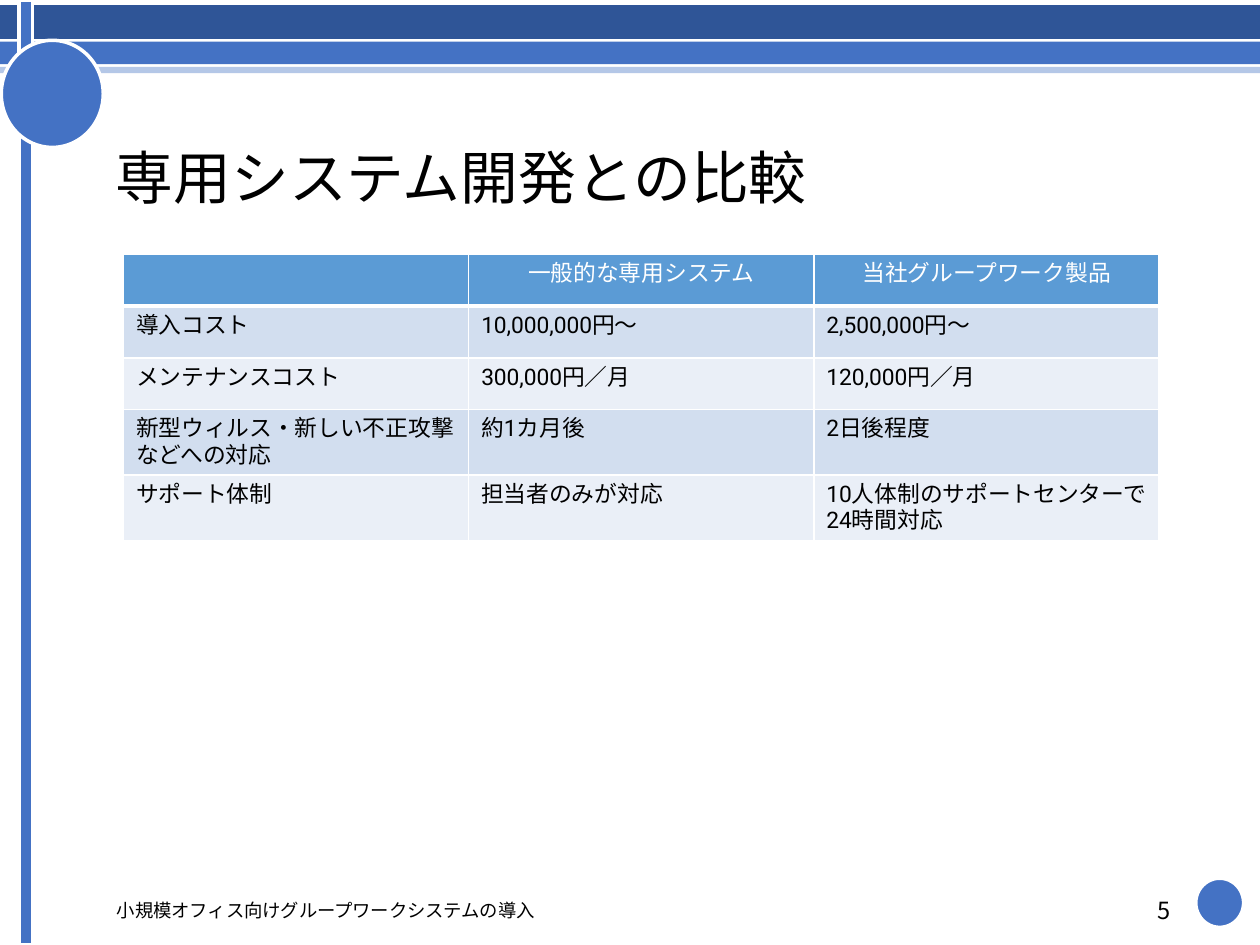
from lxml.etree import SubElement
from pptx import Presentation
from pptx.dml.color import RGBColor
from pptx.enum.shapes import MSO_SHAPE as Shape
from pptx.enum.text import MSO_ANCHOR as Anchor, PP_ALIGN as Align
from pptx.oxml.ns import qn
from pptx.util import Inches, Pt

WHITE = RGBColor(0xFF, 0xFF, 0xFF)
BLACK = RGBColor(0x00, 0x00, 0x00)
NAVY = RGBColor(0x2F, 0x55, 0x97)
BLUE = RGBColor(0x44, 0x72, 0xC4)
PALE_BLUE = RGBColor(0xB4, 0xC7, 0xE7)
HEADER_BLUE = RGBColor(0x5B, 0x9B, 0xD5)
BAND_DARK = RGBColor(0xD2, 0xDE, 0xEF)
BAND_LIGHT = RGBColor(0xEA, 0xEF, 0xF7)

TITLE_FORMAT = {"name": "Roboto", "size": Pt(33)}
TABLE_FORMAT = {"name": "Roboto", "size": Pt(13)}
FOOTER_FORMAT = {"name": "Noto Sans CJK JP", "size": Pt(10.5)}
NUMBER_FORMAT = {"name": "Noto Sans CJK JP", "size": Pt(13.5)}

COMPARISON = [
    ["", "一般的な専用システム", "当社グループワーク製品"],
    ["導入コスト", "10,000,000円～", "2,500,000円～"],
    ["メンテナンスコスト", "300,000円／月", "120,000円／月"],
    ["新型ウィルス・新しい不正攻撃などへの対応", "約1カ月後", "2日後程度"],
    ["サポート体制", "担当者のみが対応", "10人体制のサポートセンターで24時間対応"],
]


def to_inches(box):
    return [Inches(length) for length in box]


def write_text(frame, text, font_format, color=BLACK, align=Align.LEFT):
    paragraph = frame.paragraphs[0]
    paragraph.alignment = align
    run = paragraph.add_run()
    run.text = text
    for name, value in font_format.items():
        setattr(run.font, name, value)
    run.font.color.rgb = color
    east_asian = SubElement(run.font._element, qn("a:ea"))
    east_asian.set("typeface", font_format["name"])


def add_block(slide, kind, box, color, outlined=False):
    shape = slide.shapes.add_shape(kind, *to_inches(box))
    shape.shadow.inherit = False
    shape.fill.solid()
    shape.fill.fore_color.rgb = color
    if outlined:
        shape.line.color.rgb = WHITE
        shape.line.width = Pt(2)
    else:
        shape.line.fill.background()


def add_decoration(slide, box):
    left, top, width, height = box
    for offset, thickness, color in [
        (0.04, 0.27, NAVY), (0.33, 0.18, BLUE), (0.53, 0.05, PALE_BLUE),
    ]:
        band = (left, top + offset, width, thickness)
        add_block(slide, Shape.RECTANGLE, band, color)
    stripe = (left + 0.15, top, 0.11, height)
    add_block(slide, Shape.RECTANGLE, stripe, BLUE, outlined=True)
    for circle in [
        (left + 0.01, top + 0.32, 0.81, 0.85),
        (left + width - 0.51, top + height - 0.53, 0.38, 0.39),
    ]:
        add_block(slide, Shape.OVAL, circle, BLUE, outlined=True)


def add_title(slide, box, text):
    title = slide.shapes.title
    title.left, title.top, title.width, title.height = to_inches(box)
    title.text_frame.vertical_anchor = Anchor.MIDDLE
    write_text(title.text_frame, text, TITLE_FORMAT)


def set_borders(cell, bottom_width):
    properties = cell._tc.get_or_add_tcPr()
    for position, side in enumerate(["lnL", "lnR", "lnT", "lnB"]):
        line = properties.makeelement(qn(f"a:{side}"), {})
        properties.insert(position, line)
        line.set("w", str(bottom_width if side == "lnB" else Pt(1)))
        fill = SubElement(line, qn("a:solidFill"))
        SubElement(fill, qn("a:srgbClr")).set("val", str(WHITE))


def add_comparison(slide, box, rows):
    frame = slide.shapes.add_table(len(rows), len(rows[0]), *to_inches(box))
    table = frame.table
    for column in table.columns:
        column.width = Inches(box[2] / len(rows[0]))
    for row_index, texts in enumerate(rows):
        is_header = row_index == 0
        band = BAND_DARK if row_index % 2 else BAND_LIGHT
        table.rows[row_index].height = Inches(0.41)
        for column_index, text in enumerate(texts):
            cell = table.cell(row_index, column_index)
            cell.fill.solid()
            cell.fill.fore_color.rgb = HEADER_BLUE if is_header else band
            set_borders(cell, Pt(3) if is_header else Pt(1))
            if text:
                write_text(cell.text_frame, text, TABLE_FORMAT,
                           WHITE if is_header else BLACK,
                           Align.CENTER if is_header else Align.LEFT)


def add_footer(slide, box, text, number):
    left, top, width, height = box
    for part, content, font_format, align in [
        ((left, top, 5.78, height), text, FOOTER_FORMAT, Align.LEFT),
        ((left + width - 0.6, top, 0.6, height), number, NUMBER_FORMAT, Align.RIGHT),
    ]:
        frame = slide.shapes.add_textbox(*to_inches(part)).text_frame
        frame.word_wrap = True
        frame.vertical_anchor = Anchor.MIDDLE
        write_text(frame, content, font_format, align=align)


def main():
    presentation = Presentation()
    presentation.slide_width = Inches(10)
    presentation.slide_height = Inches(7.5)
    slide = presentation.slides.add_slide(presentation.slide_layouts[5])
    add_decoration(slide, (0, 0, 10, 7.5))
    add_title(slide, (0.82, 0.83, 8.57, 1.14), "専用システム開発との比較")
    add_comparison(slide, (0.98, 2.02, 8.22, 2.05), COMPARISON)
    add_footer(slide, (0.83, 7.07, 8.56, 0.31),
               "小規模オフィス向けグループワークシステムの導入", "5")
    presentation.save("out.pptx")


if __name__ == "__main__":
    main()
